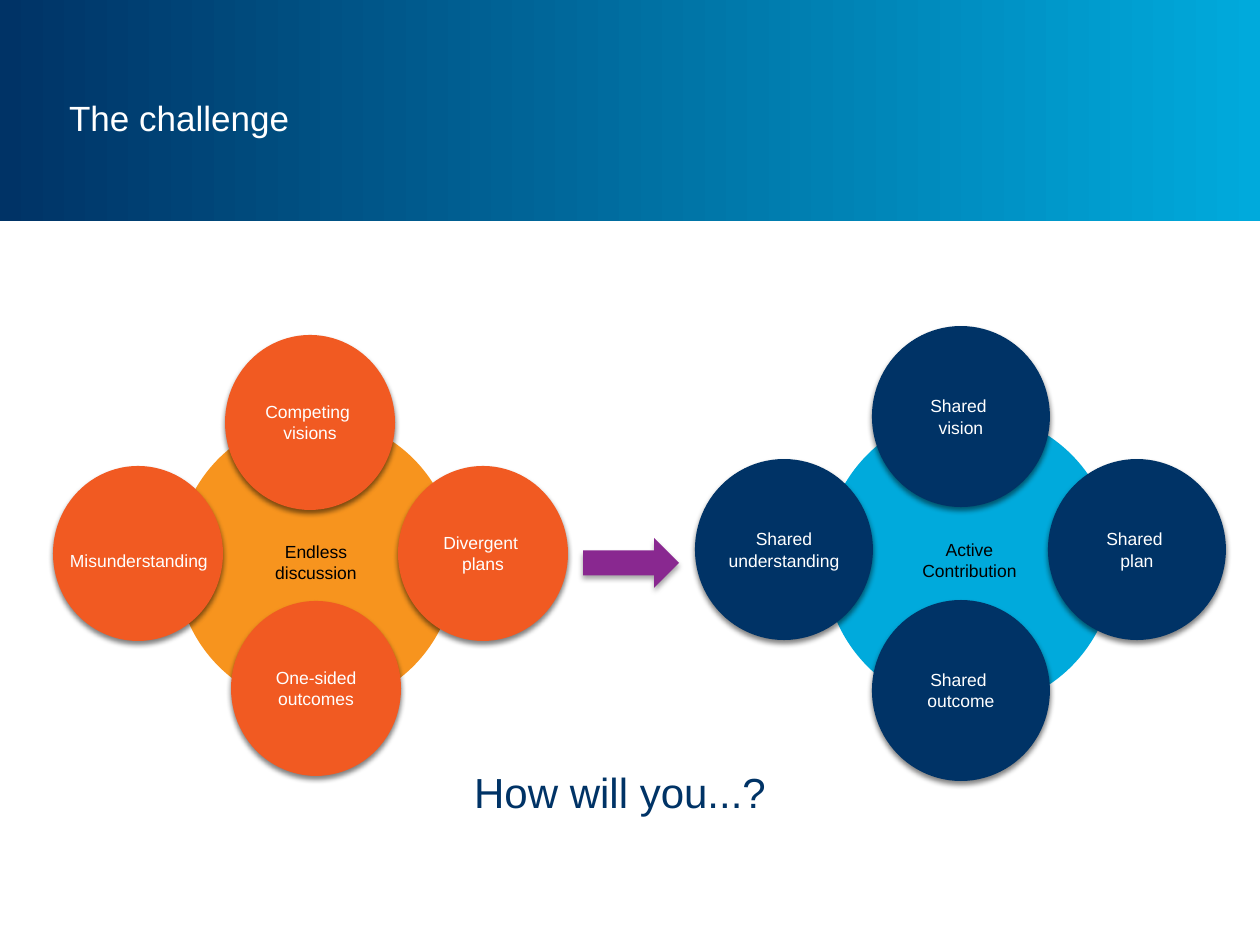
from lxml.etree import SubElement
from pptx import Presentation
from pptx.dml.color import RGBColor
from pptx.enum.shapes import MSO_SHAPE
from pptx.enum.text import MSO_ANCHOR, MSO_AUTO_SIZE, PP_ALIGN
from pptx.oxml.ns import qn
from pptx.util import Emu, Pt

PX = 914400 / 126
NAVY = RGBColor(0x00, 0x33, 0x66)
SKY = RGBColor(0x00, 0xAA, 0xDC)
ORANGE = RGBColor(0xF1, 0x5A, 0x22)
AMBER = RGBColor(0xF7, 0x94, 0x1E)
PURPLE = RGBColor(0x89, 0x28, 0x90)
WHITE = RGBColor(0xFF, 0xFF, 0xFF)
BLACK = RGBColor(0x00, 0x00, 0x00)


def px(*lengths):
    return [Emu(round(length * PX)) for length in lengths]


class SlideBuilder:
    font_name = "Arial"
    margin = 5

    def __init__(self, page):
        self.page = page

    def set_text(self, box, text, size, color, align=PP_ALIGN.CENTER,
                 anchor=MSO_ANCHOR.MIDDLE, margin=margin):
        """Fill a shape with text, one paragraph per line."""
        frame = box.text_frame
        frame.text = text
        inset = px(margin)[0]
        frame_format = {
            "word_wrap": True, "auto_size": MSO_AUTO_SIZE.NONE,
            "vertical_anchor": anchor, "margin_left": inset,
            "margin_right": inset, "margin_top": inset, "margin_bottom": inset,
        }
        for name, value in frame_format.items():
            setattr(frame, name, value)
        for para in frame.paragraphs:
            para.alignment = align
            for name, value in {"name": self.font_name, "size": Pt(size)}.items():
                setattr(para.font, name, value)
            para.font.color.rgb = color

    def title(self, text, place):
        box = self.page.shapes.title
        for name, value in zip(("left", "top", "width", "height"), px(*place)):
            setattr(box, name, value)
        self.set_text(box, text, 20, WHITE, PP_ALIGN.LEFT)

    def band(self, place, start, end):
        """Draw a left-to-right gradient band behind the title."""
        band = self.shape(MSO_SHAPE.RECTANGLE, place, start)
        band.fill.gradient()
        band.fill.gradient_angle = 0
        for stop, color in zip(band.fill.gradient_stops, (start, end)):
            stop.color.rgb = color
        self.page.shapes.title.element.addprevious(band.element)

    def shape(self, kind, place, color, parent=None, shadow_alpha=0):
        shape = (parent or self.page).shapes.add_shape(kind, *px(*place))
        shape.fill.solid()
        shape.fill.fore_color.rgb = color
        shape.line.fill.background()
        shape.shadow.inherit = False
        if shadow_alpha:
            effects = shape.element.spPr.find(qn("a:effectLst"))
            shadow = SubElement(effects, qn("a:outerShdw"), blurRad="38100",
                                dist="25400", dir="5400000", rotWithShape="0")
            tint = SubElement(shadow, qn("a:srgbClr"), val="000000")
            SubElement(tint, qn("a:alpha"), val=str(shadow_alpha * 1000))
        return shape

    def text(self, text, place, size, color, parent=None, **style):
        box = (parent or self.page).shapes.add_textbox(*px(*place))
        self.set_text(box, text, size, color, anchor=MSO_ANCHOR.TOP, **style)

    def ring(self, hub_text, hub_place, hub_color, circle_size, circle_color, circles):
        """Group a central disc with the labelled circles that overlap it."""
        group = self.page.shapes.add_group_shape()
        hub = self.shape(MSO_SHAPE.OVAL, hub_place, hub_color, group)
        self.set_text(hub, hub_text, 10, BLACK)
        for label, corner in circles:
            circle = self.shape(MSO_SHAPE.OVAL, corner + circle_size,
                                circle_color, group, shadow_alpha=50)
            if label:
                self.set_text(circle, label, 10, WHITE)
        return group


def main():
    deck = Presentation()
    deck.slide_width, deck.slide_height = px(1260, 945)
    builder = SlideBuilder(deck.slides.add_slide(deck.slide_layouts[5]))

    builder.band((0, 0, 1260, 221), NAVY, SKY)
    builder.text("How will you...?", (421, 762, 398, 64), 24, NAVY)
    builder.title("The challenge", (64, 38, 942, 159))

    problems = builder.ring(
        "Endless\ndiscussion", (176, 418, 280, 289), AMBER, (170, 175), ORANGE,
        [("Competing \nvisions", (225, 335)),
         (None, (53, 466)),
         ("Divergent \nplans", (398, 466)),
         ("One-sided outcomes", (231, 601))])
    # This word is wider than its circle's text area, so it has its own box.
    builder.text("Misunderstanding", (58, 538, 198, 34), 10, WHITE, problems,
                 align=PP_ALIGN.LEFT, margin=12)

    builder.ring(
        "Active\nContribution", (824, 412, 291, 297), SKY, (178, 181), NAVY,
        [("Shared \nvision", (872, 326)),
         ("Shared\nunderstanding", (695, 459)),
         ("Shared \nplan", (1048, 459)),
         ("Shared \noutcome", (872, 600))])
    builder.shape(MSO_SHAPE.RIGHT_ARROW, (583, 538, 96, 50), PURPLE, shadow_alpha=35)

    deck.save("out.pptx")


if __name__ == "__main__":
    main()
